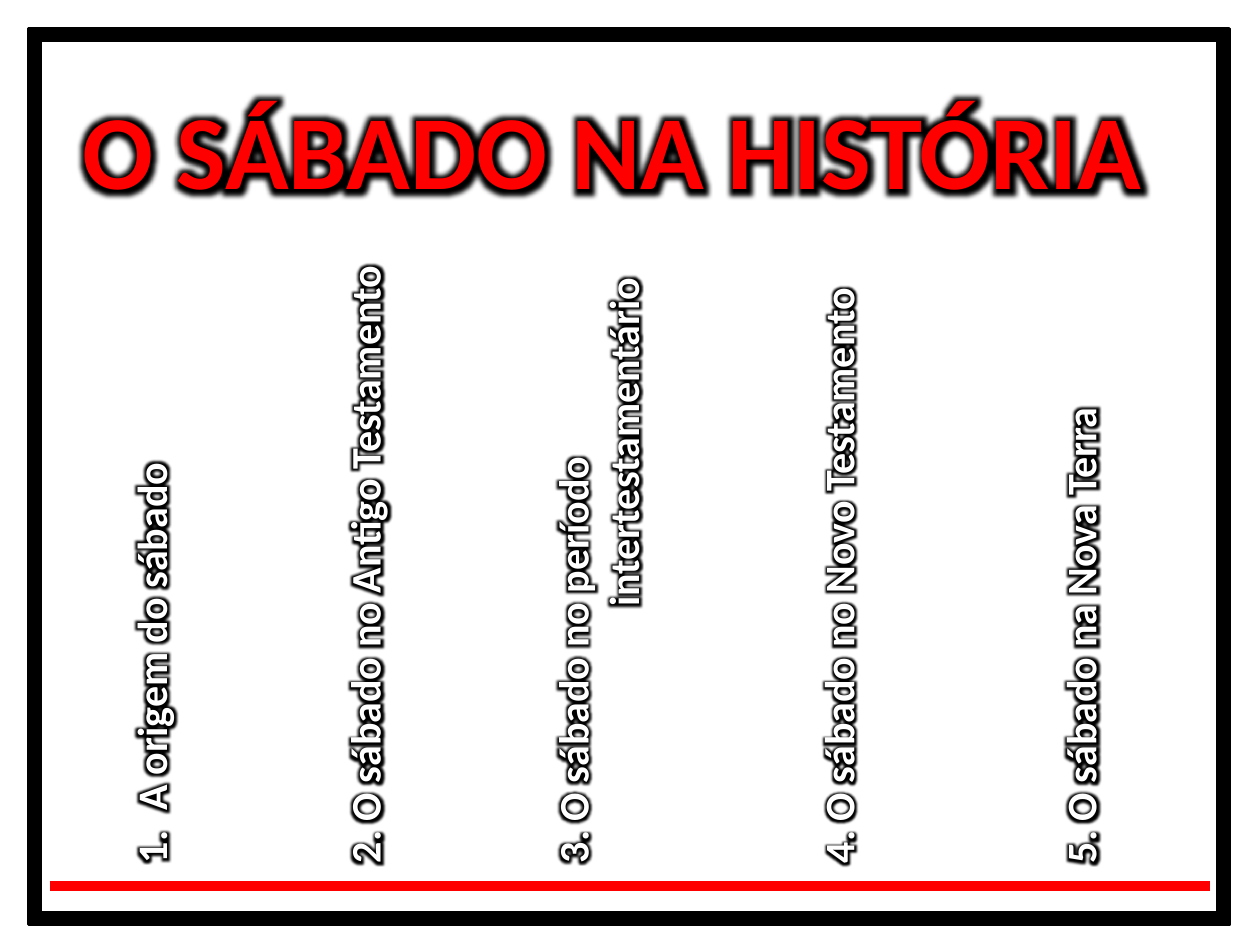
from dataclasses import dataclass

from lxml import etree
from pptx import Presentation
from pptx.dml.color import RGBColor
from pptx.enum.shapes import MSO_CONNECTOR, MSO_SHAPE
from pptx.enum.text import MSO_ANCHOR, MSO_AUTO_SIZE, PP_ALIGN
from pptx.oxml.ns import qn
from pptx.util import Cm, Pt

STRAIGHT = MSO_CONNECTOR.STRAIGHT
FRAME = MSO_SHAPE.FRAME
TOP = MSO_ANCHOR.TOP
GROW = MSO_AUTO_SIZE.SHAPE_TO_FIT_TEXT
LEFT = PP_ALIGN.LEFT
TITLE_ONLY = 5


@dataclass(frozen=True)
class Theme:
    font: str = "Calibri"
    black: RGBColor = RGBColor(0, 0, 0)
    red: RGBColor = RGBColor(255, 0, 0)
    white: RGBColor = RGBColor(255, 255, 255)
    title_size: int = 60
    topic_size: int = 24
    title_glow: int = 11
    topic_glow: int = 8


THEME = Theme()
TOPIC_BOTTOM = 17.65
LINE_HEIGHT = 1.03
BOX_PADDING = 0.25
NUMBER_TAB = 1.07
SECOND_LINE_INDENT = 5.17

# Centre of the column, length of the upright box, lines of text
TOPICS = [
    (3.04, 16.08, ["1.\tA origem do sábado"]),
    (7.34, 17.6, ["2. O sábado no Antigo Testamento"]),
    (12.05, 14.3, ["3. O sábado no período", "intertestamentário"]),
    (16.89, 14.12, ["4. O sábado no Novo Testamento"]),
    (21.77, 13.67, ["5. O sábado na Nova Terra"]),
]


def add_glow(run, radius):
    """Surround the run with a black glow; its fill must be set already."""
    effects = etree.Element(qn("a:effectLst"))
    glow = etree.SubElement(effects, qn("a:glow"), rad=str(Pt(radius)))
    etree.SubElement(glow, qn("a:srgbClr"), val=str(THEME.black))
    run.font.fill._xPr.find(qn("a:solidFill")).addnext(effects)


def write_line(paragraph, text, size, color, glow):
    paragraph.alignment = LEFT
    run = paragraph.add_run()
    run.text = text
    run.font.color.rgb = color
    for name, value in {"name": THEME.font, "size": Pt(size), "bold": True}.items():
        setattr(run.font, name, value)
    add_glow(run, glow)


def format_text_frame(text_frame):
    values = {"word_wrap": True, "auto_size": GROW, "vertical_anchor": TOP}
    for name, value in values.items():
        setattr(text_frame, name, value)


def add_tab_stop(paragraph, position):
    properties = paragraph._p.get_or_add_pPr()
    tabs = etree.SubElement(properties, qn("a:tabLst"))
    etree.SubElement(tabs, qn("a:tab"), pos=str(Cm(position)), algn="l")


def add_border(slide):
    border = slide.shapes.add_shape(FRAME, Cm(0.58), Cm(0.58), Cm(24.2), Cm(18.06))
    border.adjustments[0] = 0.013
    border.shadow.inherit = False
    border.fill.solid()
    border.fill.fore_color.rgb = THEME.black
    border.line.color.rgb = THEME.black
    border.line.width = Pt(2)


def set_title(slide, text):
    title = slide.shapes.title
    place = {"left": 1.4, "top": 1.57, "width": 22.63, "height": 2.82}
    for name, value in place.items():
        setattr(title, name, Cm(value))
    format_text_frame(title.text_frame)
    write_line(title.text_frame.paragraphs[0], text,
               THEME.title_size, THEME.red, THEME.title_glow)


def add_base_line(slide):
    line = slide.shapes.add_connector(STRAIGHT, Cm(1), Cm(17.86), Cm(24.4), Cm(17.86))
    line.line.color.rgb = THEME.red
    line.line.width = Pt(6)
    etree.SubElement(line._element.spPr, qn("a:effectLst"))


def add_topic(slide, center, length, lines):
    """Add text that reads upwards from the base line."""
    thickness = LINE_HEIGHT * len(lines) + BOX_PADDING
    middle = TOPIC_BOTTOM - length / 2
    box = slide.shapes.add_textbox(Cm(center - length / 2), Cm(middle - thickness / 2),
                                   Cm(length), Cm(thickness))
    box.rotation = 270
    text_frame = box.text_frame
    format_text_frame(text_frame)
    for index, text in enumerate(lines):
        paragraph = text_frame.add_paragraph() if index else text_frame.paragraphs[0]
        if index:
            paragraph._p.get_or_add_pPr().set("marL", str(Cm(SECOND_LINE_INDENT)))
        if "\t" in text:
            add_tab_stop(paragraph, NUMBER_TAB)
        write_line(paragraph, text, THEME.topic_size, THEME.white, THEME.topic_glow)


def main():
    presentation = Presentation()
    presentation.slide_width = Cm(25.4)
    presentation.slide_height = Cm(19.05)
    slide = presentation.slides.add_slide(presentation.slide_layouts[TITLE_ONLY])
    add_border(slide)
    set_title(slide, "O SÁBADO NA HISTÓRIA")
    add_base_line(slide)
    for center, length, lines in TOPICS:
        add_topic(slide, center, length, lines)
    presentation.save("out.pptx")


if __name__ == "__main__":
    main()
